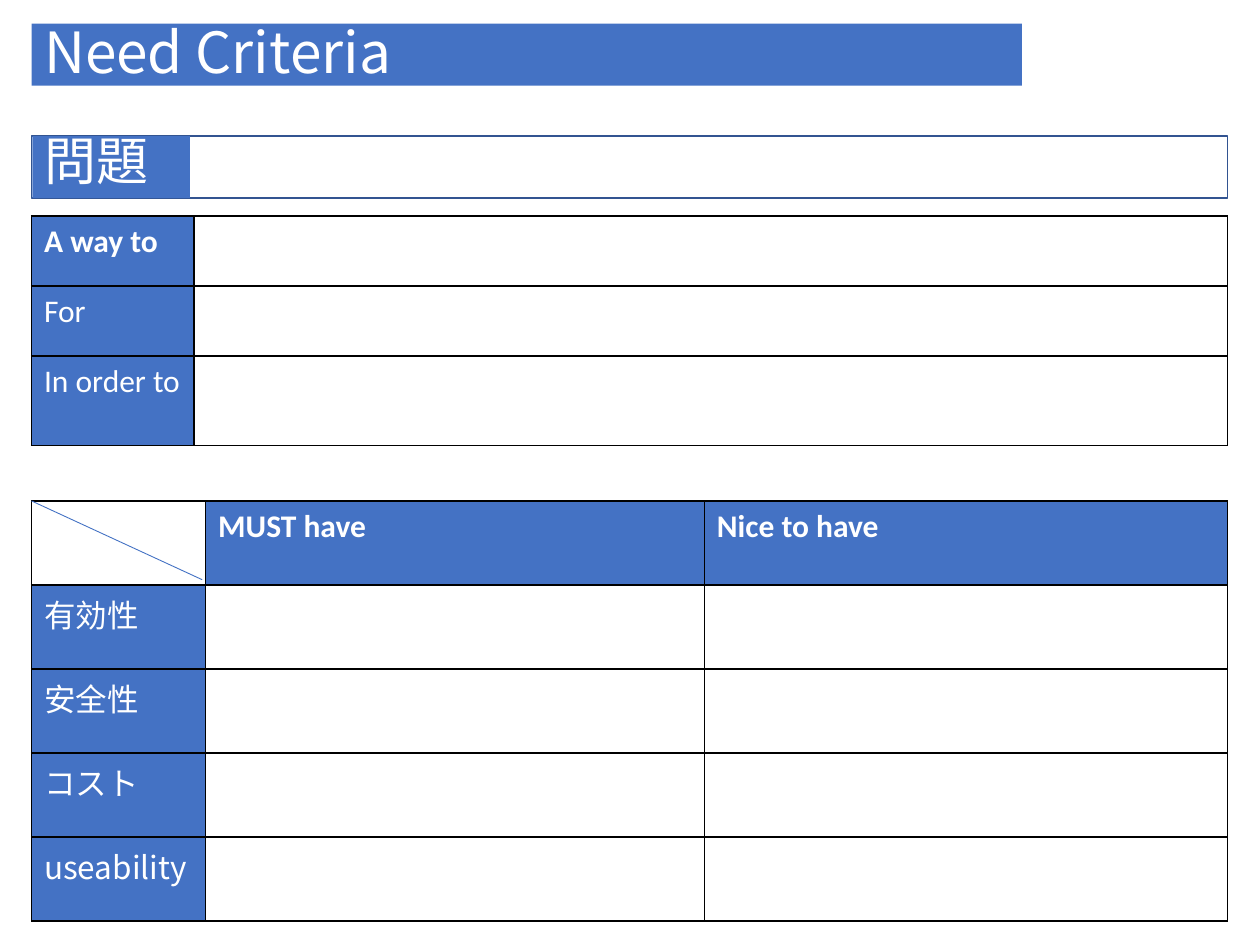
from lxml import etree
from pptx import Presentation
from pptx.dml.color import RGBColor
from pptx.enum import shapes, text
from pptx.oxml.ns import qn
from pptx.util import Pt

BLUE = RGBColor(0x44, 0x72, 0xC4)
NAVY = RGBColor(0x32, 0x54, 0x91)
WHITE = RGBColor(0xFF, 0xFF, 0xFF)
BLACK = RGBColor(0, 0, 0)
LATIN, CJK = "Calibri", "Noto Sans CJK JP"
LEFT, WIDE, BAR = 18, 683.5, 35.5


def write(frame, words, size, face, bold=False, space=None):
    para = frame.paragraphs[0]
    for key, val in dict(alignment=text.PP_ALIGN.LEFT, line_spacing=space).items():
        setattr(para, key, val)
    run = para.add_run()
    run.text = words
    for key, val in dict(size=Pt(size), name=face, bold=bold).items():
        setattr(run.font, key, val)
    run.font.color.rgb = WHITE
    if face == CJK:
        latin = run.font._element.find(qn("a:latin"))
        east = etree.Element(qn("a:ea"), typeface=face)
        latin.addnext(east)


def paint(shape, fill=None, line=None):
    if fill is None:
        shape.fill.background()
    else:
        shape.fill.solid()
        shape.fill.fore_color.rgb = fill
    if line is None:
        shape.line.fill.background()
    else:
        shape.line.color.rgb = line
        shape.line.width = Pt(1)


def label(shape, words, size, space):
    frame = shape.text_frame
    form = dict(word_wrap=True, auto_size=text.MSO_AUTO_SIZE.NONE,
                vertical_anchor=text.MSO_ANCHOR.MIDDLE)
    for key, val in form.items():
        setattr(frame, key, val)
    write(frame, words, size, CJK, space=space)


def head(slide, x, y, w, h):
    title = slide.shapes.title
    for key, val in dict(left=x, top=y, width=w, height=h).items():
        setattr(title, key, Pt(val))
    paint(title, BLUE)
    label(title, "Need Criteria", 32.4, 0.9)


def issue(slide, x, y, w, h):
    for dx, wide, fill, line in ((0, w, None, NAVY), (0.5, 90, BLUE, None)):
        box = slide.shapes.add_shape(shapes.MSO_SHAPE.RECTANGLE,
                                     Pt(x + dx), Pt(y), Pt(wide), Pt(h))
        box.shadow.inherit = False
        paint(box, fill, line)
    label(box, "問題", 29.7, 0.7)


def border(cell):
    props = cell._tc.get_or_add_tcPr()
    for spot, side in enumerate(("lnL", "lnR", "lnT", "lnB")):
        line = etree.Element(qn("a:" + side), w=str(Pt(1)))
        fill = etree.SubElement(line, qn("a:solidFill"))
        etree.SubElement(fill, qn("a:srgbClr"), val=str(BLACK))
        props.insert(spot, line)


def grid(slide, x, y, cols, rows, cells):
    table = slide.shapes.add_table(len(rows), len(cols), Pt(x), Pt(y),
                                   Pt(sum(cols)), Pt(sum(rows))).table
    table.first_row = table.horz_banding = False
    for col, wide in zip(table.columns, cols):
        col.width = Pt(wide)
    for row, high in zip(table.rows, rows):
        row.height = Pt(high)
    for r in range(len(rows)):
        for c in range(len(cols)):
            cell = table.cell(r, c)
            border(cell)
            if (r, c) in cells:
                words, face, bold = cells[r, c]
                cell.fill.solid()
                cell.fill.fore_color.rgb = BLUE
                write(cell.text_frame, words, 18, face, bold)
            else:
                cell.fill.background()


def need(slide, x, y, w):
    names = ("A way to", "For", "In order to")
    cells = {(r, 0): (name, LATIN, r == 0) for r, name in enumerate(names)}
    grid(slide, x, y, (93, w - 93), (40, 40, 51), cells)


def rank(slide, x, y, w):
    tops = ("MUST have", "Nice to have")
    sides = ("有効性", "安全性", "コスト", "useability")
    cells = {(0, c): (name, LATIN, True) for c, name in enumerate(tops, 1)}
    cells.update({(r, 0): (name, CJK, False) for r, name in enumerate(sides, 1)})
    first, must = 99.5, 285
    grid(slide, x, y, (first, must, w - first - must), [48] * 5, cells)
    line = slide.shapes.add_connector(shapes.MSO_CONNECTOR.STRAIGHT, Pt(x), Pt(y),
                                      Pt(x + 97.5), Pt(y + 45))
    line.line.color.rgb = BLUE
    line.line.width = Pt(0.5)
    etree.SubElement(line._element.spPr, qn("a:effectLst"))


def main():
    deck = Presentation()
    deck.slide_width, deck.slide_height = Pt(720), Pt(540)
    slide = deck.slides.add_slide(deck.slide_layouts[5])
    head(slide, LEFT, 13.5, 566, BAR)
    issue(slide, LEFT, 77.75, WIDE, BAR)
    need(slide, LEFT, 123.5, WIDE)
    rank(slide, LEFT, 286.25, WIDE)
    deck.save("out.pptx")


if __name__ == "__main__":
    main()
